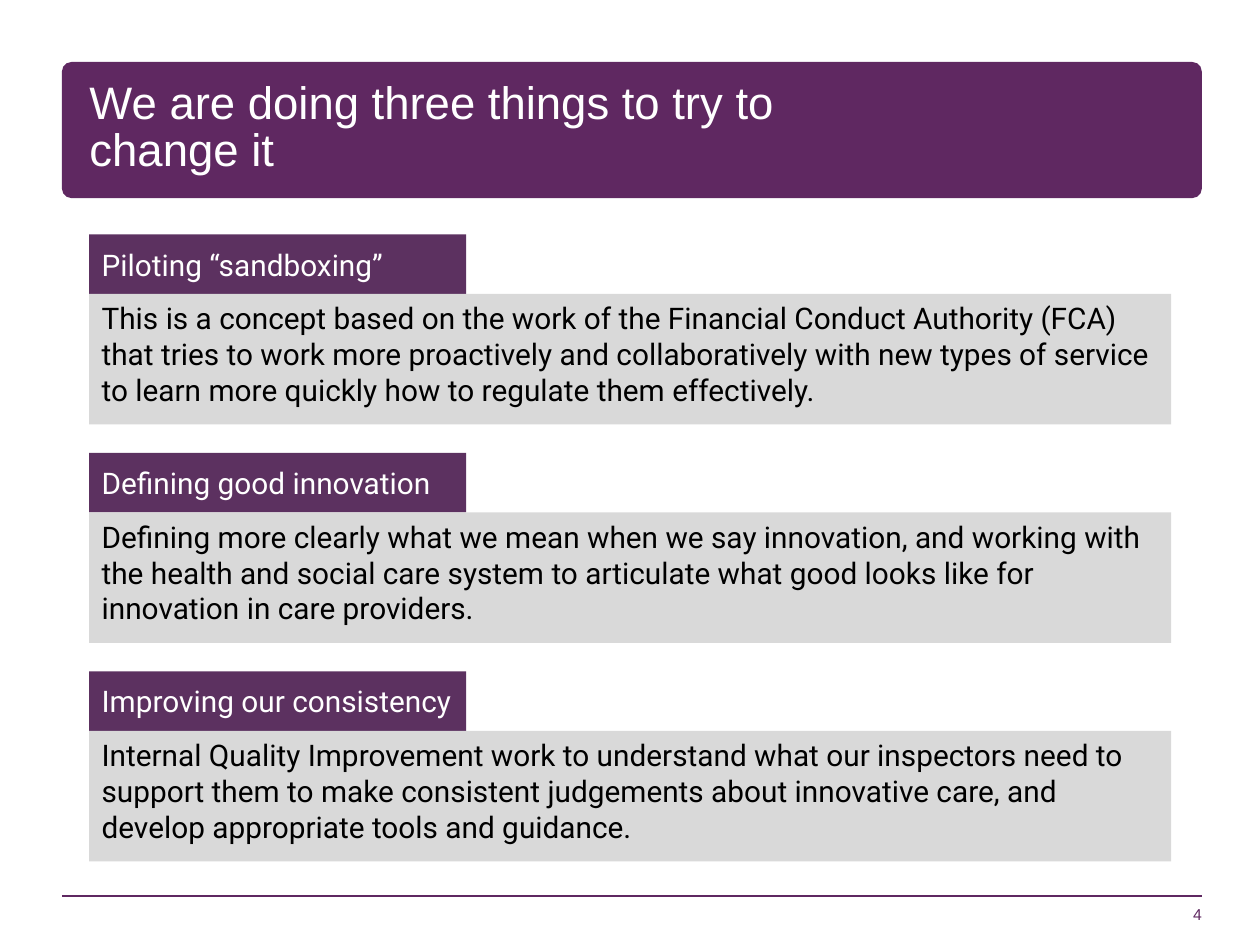
from pptx import Presentation
from pptx.dml.color import RGBColor
from pptx.enum.shapes import MSO_CONNECTOR, MSO_SHAPE
from pptx.enum.text import MSO_ANCHOR, MSO_AUTO_SIZE, PP_ALIGN
from pptx.oxml.ns import qn
from pptx.util import Pt

RECT = MSO_SHAPE.RECTANGLE
ROUND = MSO_SHAPE.ROUNDED_RECTANGLE
LINE = MSO_CONNECTOR.STRAIGHT
TOP, MID, LOW = MSO_ANCHOR.TOP, MSO_ANCHOR.MIDDLE, MSO_ANCHOR.BOTTOM
LEFT, RIGHT = PP_ALIGN.LEFT, PP_ALIGN.RIGHT
FIXED = MSO_AUTO_SIZE.NONE

PURPLE, PLUM, GREY = "5F2861", "5C3160", "D9D9D9"
WHITE, BLACK = "FFFFFF", "000000"

ITEMS = [
    ("Piloting “sandboxing”",
     "This is a concept based on the work of the Financial Conduct Authority "
     "(FCA) that tries to work more proactively and collaboratively with new "
     "types of service to learn more quickly how to regulate them effectively."),
    ("Defining good innovation",
     "Defining more clearly what we mean when we say innovation, and working "
     "with the health and social care system to articulate what good looks "
     "like for innovation in care providers."),
    ("Improving our consistency",
     "Internal Quality Improvement work to understand what our inspectors "
     "need to support them to make consistent judgements about innovative "
     "care, and develop appropriate tools and guidance."),
]


def color(code):
    return RGBColor.from_string(code)


class Page:
    head_font, body_font = "Arial", "Roboto"
    head_size, body_size, note_size = 26, 17, 9

    def __init__(self, slide):
        self.slide = slide
        self.shapes = slide.shapes

    def label(self, shape, text, font, size, ink, anchor, align=LEFT, pad=(0, 0)):
        frame = shape.text_frame
        frame.text = text
        frame.word_wrap = True
        frame.auto_size = FIXED
        frame.vertical_anchor = anchor
        frame.margin_left = frame.margin_right = Pt(pad[0])
        frame.margin_top = frame.margin_bottom = Pt(pad[1])
        para = frame.paragraphs[0]
        para.alignment = align
        for run in para.runs:
            run.font.name = font
            run.font.size = Pt(size)
            run.font.color.rgb = color(ink)
        return para

    def block(self, kind, box, fill):
        shape = self.shapes.add_shape(kind, *map(Pt, box))
        shape.shadow.inherit = False
        shape.fill.solid()
        shape.fill.fore_color.rgb = color(fill)
        shape.line.fill.background()
        return shape

    def panel(self, box, fill, text, ink, anchor):
        shape = self.block(RECT, box, fill)
        self.label(shape, text, self.body_font, self.body_size, ink, anchor,
                   pad=(7.2, 3.6))

    def title(self, box, text):
        shape = self.shapes.title
        shape.left, shape.top, shape.width, shape.height = map(Pt, box)
        para = self.label(shape, text, self.head_font, self.head_size, WHITE, MID)
        para.line_spacing = 0.85
        # Bring the title in front of its band
        tree = shape.element.getparent()
        tree.append(shape.element)

    def rule(self, ends, ink):
        line = self.shapes.add_connector(LINE, *map(Pt, ends))
        line.line.color.rgb = color(ink)
        line.line.width = Pt(1)
        props = line.element.spPr
        props.append(props.makeelement(qn("a:effectLst"), {}))

    def note(self, box, text):
        shape = self.shapes.add_textbox(*map(Pt, box))
        self.label(shape, text, self.head_font, self.note_size, PURPLE, LOW, RIGHT)


def main():
    deck = Presentation()
    deck.slide_width, deck.slide_height = Pt(720), Pt(540)
    page = Page(deck.slides.add_slide(deck.slide_layouts[5]))

    # Title band
    band = page.block(ROUND, (35.4, 35.4, 651.4, 77.8), PURPLE)
    band.adjustments[0] = 0.07
    page.title((51.1, 38.2, 439.2, 71.3), "We are doing three things to try to change it")

    # Labelled sections
    left, first, step = 51, 134, 124.8
    tab, wide, tall, deep = 215.5, 618.3, 34, 74.6
    for i, (name, text) in enumerate(ITEMS):
        top = first + i * step
        page.panel((left, top, tab, tall), PLUM, name, WHITE, MID)
        page.panel((left, top + tall, wide, deep), GREY, text, BLACK, TOP)

    # Footer
    page.rule((686.8, 512, 35.4, 512), PURPLE)
    page.note((537, 491.8, 149.8, 36), "4")

    deck.save("out.pptx")


if __name__ == "__main__":
    main()
